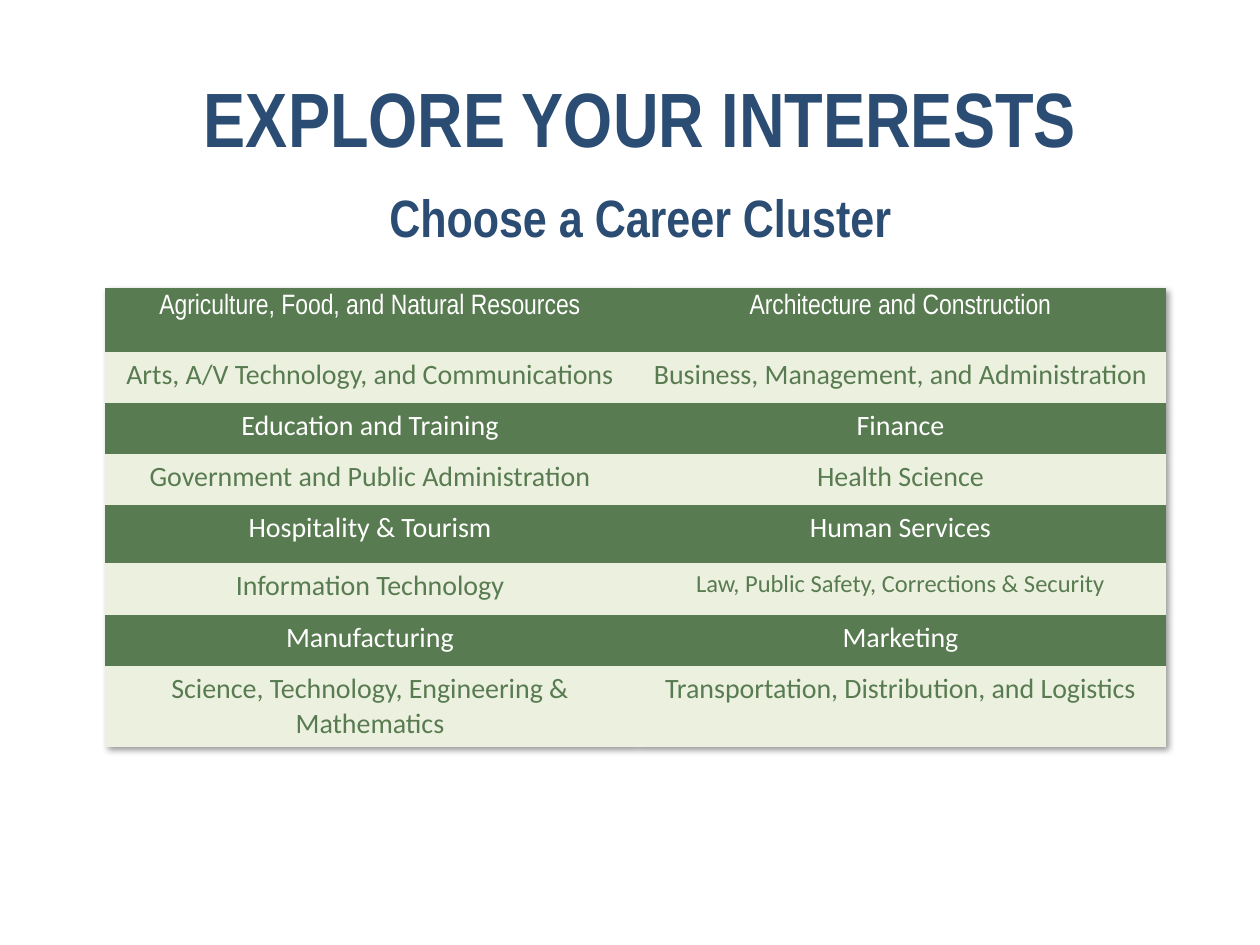
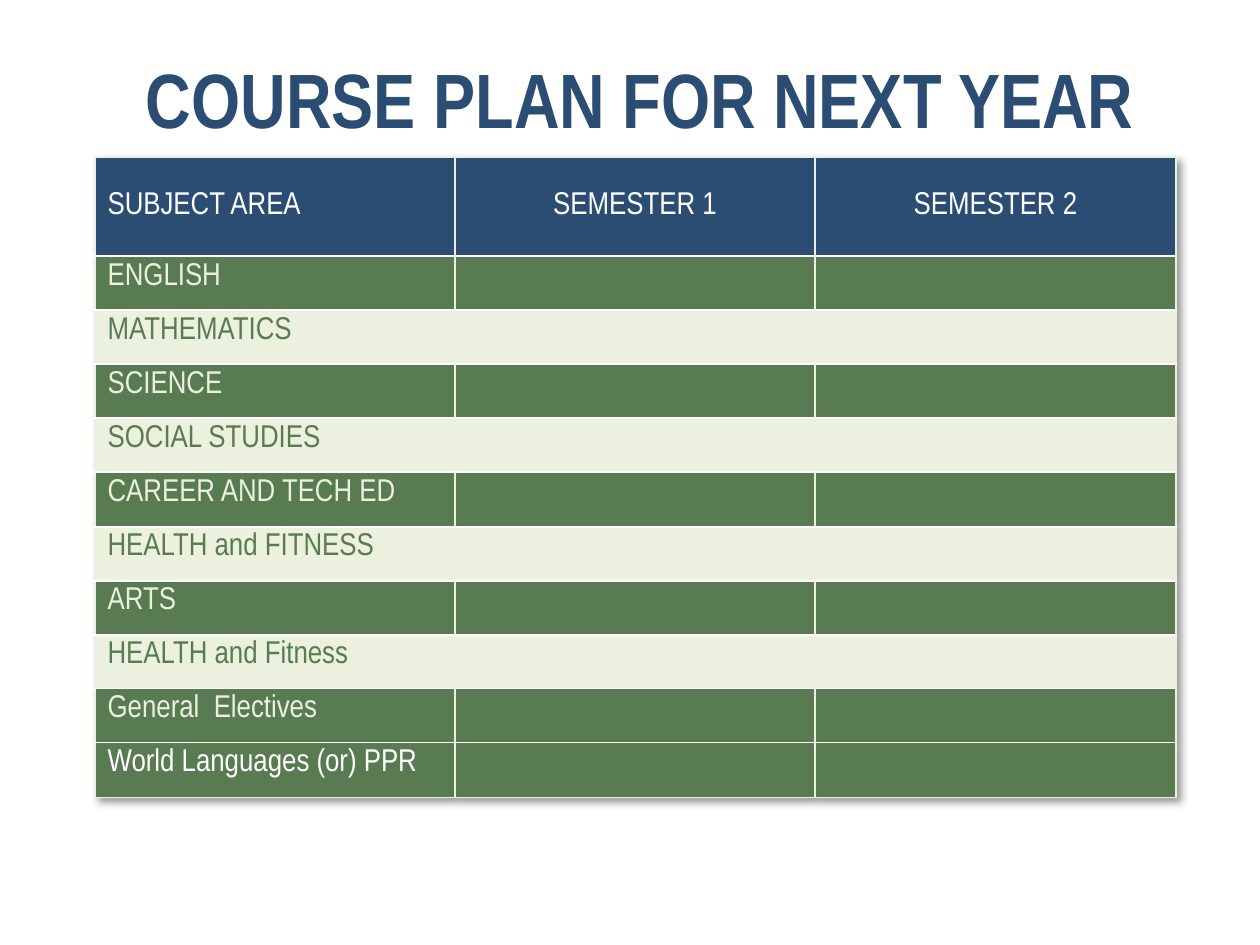
from lxml import etree
from pptx import Presentation
from pptx.dml.color import RGBColor
from pptx.enum.text import MSO_ANCHOR as ANCHOR, PP_ALIGN as ALIGN
from pptx.oxml import parse_xml
from pptx.oxml.ns import nsdecls, qn
from pptx.util import Pt

EMU_PER_PX = 914400 / 126
NAVY = RGBColor(0x2B, 0x4C, 0x73)
GREEN = RGBColor(0x59, 0x7B, 0x51)
CREAM = RGBColor(0xEB, 0xF1, 0xDE)
WHITE = RGBColor(0xFF, 0xFF, 0xFF)
NARROW, CALIBRI = "Arial Narrow", "Calibri"
NO_GRID_STYLE = "{2D5ABB26-0587-4C30-8999-92F81FD0307C}"

CLUSTERS = [
    ("Agriculture, Food, and Natural Resources", "Architecture and Construction"),
    ("Arts, A/V Technology, and Communications",
     "Business, Management, and Administration"),
    ("Education and Training", "Finance"),
    ("Government and Public Administration", "Health Science"),
    ("Hospitality & Tourism", "Human Services"),
    ("Information Technology", "Law, Public Safety, Corrections & Security"),
    ("Manufacturing", "Marketing"),
    ("Science, Technology, Engineering & Mathematics",
     "Transportation, Distribution, and Logistics"),
]
CLUSTER_ROWS = [64, 51, 51, 51, 58, 52, 51, 81]
PLAN_HEADER = ["SUBJECT AREA", "SEMESTER 1", "SEMESTER 2"]
PLAN_ROWS = [99] + [54, 54, 54, 54, 55] * 2
SUBJECTS = ["ENGLISH", "MATHEMATICS", "SCIENCE", "SOCIAL STUDIES",
            "CAREER AND TECH ED", "HEALTH and FITNESS", "ARTS",
            "HEALTH and Fitness", "General  Electives", "World Languages (or) PPR"]


def px(n):
    return round(n * EMU_PER_PX)


def style_text(tf, size, font, color, align, bold=False):
    p = tf.paragraphs[0]
    p.alignment = align
    for f in [p.font] + [r.font for r in p.runs]:
        f.size, f.name, f.bold = Pt(size), font, bold
        f.color.rgb = color


def place(sp, left, top, width, height):
    sp.left, sp.top, sp.width, sp.height = map(px, (left, top, width, height))


def add_titled_slide(prs, title, height):
    slide = prs.slides.add_slide(prs.slide_layouts[5])
    sp = slide.shapes.title
    place(sp, 63, 38, 1155, height)
    sp.text_frame.text = title
    sp.text_frame.vertical_anchor = ANCHOR.MIDDLE
    style_text(sp.text_frame, 44, NARROW, NAVY, ALIGN.CENTER, bold=True)
    return slide


def add_subtitle(slide, text):
    tf = slide.shapes.add_textbox(px(116), px(179), px(1049), px(77)).text_frame
    tf.word_wrap = True
    tf.text = text
    style_text(tf, 30, NARROW, NAVY, ALIGN.CENTER, bold=True)


def add_plain_table(slide, left, top, col_widths, row_heights):
    """Add a table without grid or banding, with a soft shadow at lower right."""
    table = slide.shapes.add_table(
        len(row_heights), len(col_widths), px(left), px(top),
        px(sum(col_widths)), px(sum(row_heights))).table
    table.first_row = table.horz_banding = False
    for col, width in zip(table.columns, col_widths):
        col.width = px(width)
    for row, height in zip(table.rows, row_heights):
        row.height = px(height)
    tbl_pr = table._tbl.tblPr
    tbl_pr.find(qn("a:tableStyleId")).text = NO_GRID_STYLE
    tbl_pr.insert(0, parse_xml(
        f'<a:effectLst {nsdecls("a")}><a:outerShdw blurRad="50800" dist="38100" '
        'dir="2700000" algn="tl" rotWithShape="0"><a:srgbClr val="000000">'
        '<a:alpha val="40000"/></a:srgbClr></a:outerShdw></a:effectLst>'))
    return table


def set_borders(cell, top, bottom):
    """Draw 1 pt cream sides, and top and bottom edges in the given colours."""
    tc_pr = cell._tc.get_or_add_tcPr()
    for side, color in zip("LRTB", (CREAM, CREAM, top, bottom)):
        ln = etree.SubElement(tc_pr, qn(f"a:ln{side}"), w=str(Pt(1)))
        fill = etree.SubElement(ln, qn("a:solidFill"))
        etree.SubElement(fill, qn("a:srgbClr"), val=str(color))


def fill_cell(cell, text, fill, size, font, color, align):
    cell.fill.solid()
    cell.fill.fore_color.rgb = fill
    cell.text_frame.text = text
    style_text(cell.text_frame, size, font, color, align)


def add_cluster_table(slide):
    table = add_plain_table(slide, 105, 288, [530, 531], CLUSTER_ROWS)
    for i, names in enumerate(CLUSTERS):
        fill, color = (CREAM, GREEN) if i % 2 else (GREEN, WHITE)
        for j, name in enumerate(names):
            fill_cell(table.cell(i, j), name, fill,
                      14 if name.startswith("Law") else 16,
                      CALIBRI if i else NARROW, color, ALIGN.CENTER)


def add_plan_table(slide):
    last = len(SUBJECTS)
    table = add_plain_table(slide, 95, 157, [360, 360, 361], PLAN_ROWS)
    for j, heading in enumerate(PLAN_HEADER):
        cell = table.cell(0, j)
        set_borders(cell, CREAM, WHITE)
        fill_cell(cell, heading, NAVY, 18, NARROW, WHITE,
                  ALIGN.CENTER if j else ALIGN.LEFT)
        cell.vertical_anchor = ANCHOR.MIDDLE
    for i, subject in enumerate(SUBJECTS, 1):
        if i == last:
            fill, color = GREEN, WHITE
        else:
            fill, color = (GREEN, CREAM) if i % 2 else (CREAM, GREEN)
        for j, text in enumerate([subject, "", ""]):
            cell = table.cell(i, j)
            set_borders(cell, WHITE, CREAM if i == last else WHITE)
            fill_cell(cell, text, fill, 18, NARROW, color, ALIGN.LEFT)


def main():
    prs = Presentation()
    prs.slide_width, prs.slide_height = px(1260), px(945)

    interests = add_titled_slide(prs, "EXPLORE YOUR INTERESTS", 158)
    add_cluster_table(interests)
    add_subtitle(interests, "Choose a Career Cluster")

    plan = add_titled_slide(prs, "COURSE PLAN FOR NEXT YEAR", 120)
    add_plan_table(plan)

    prs.save("out.pptx")


if __name__ == "__main__":
    main()
